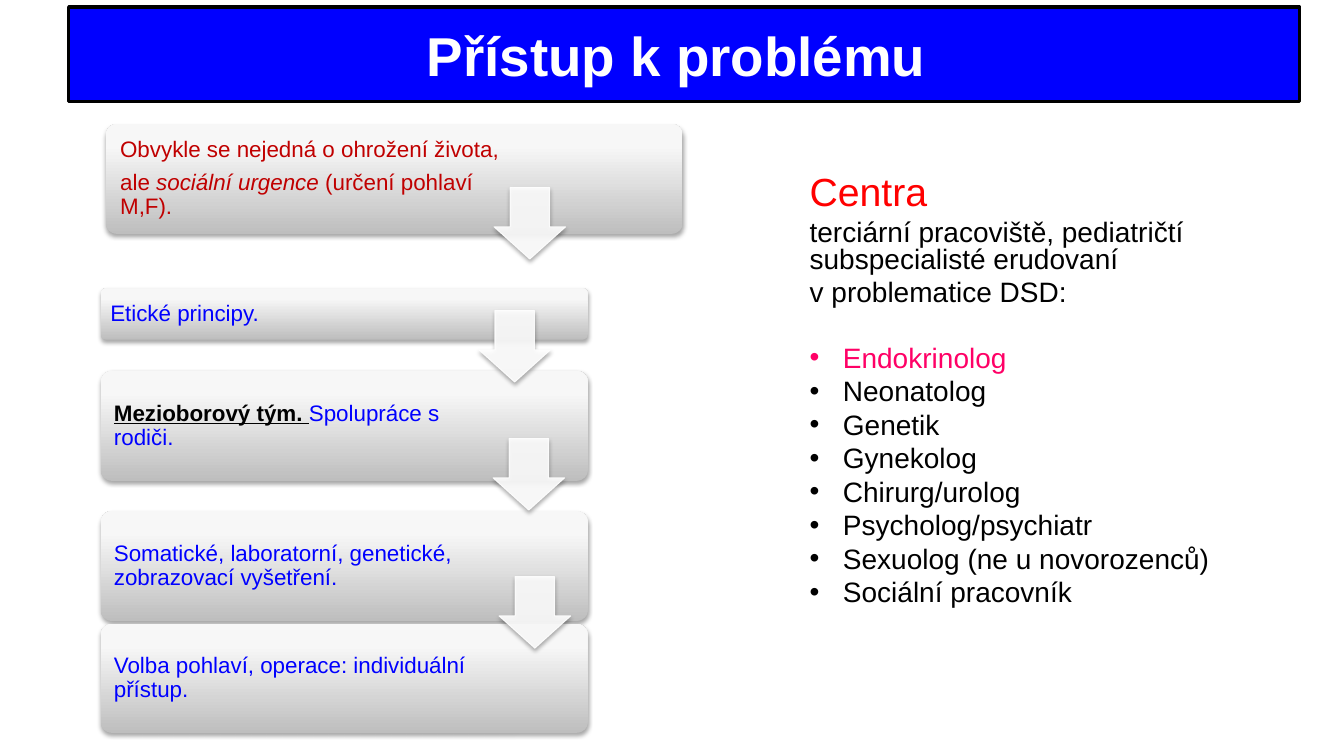
"""Build the slide on the approach to the problem: a step cascade beside a list of specialists."""
from lxml import etree
from pptx import Presentation
from pptx.dml.color import RGBColor
from pptx.enum import shapes, text
from pptx.oxml import ns
from pptx.util import Inches, Pt

COLORS = {
    "blue": "0000FF", "white": "FFFFFF", "black": "000000", "dark_red": "C00000",
    "red": "FF0000", "pink": "FF0066", "card_dark": "BEBEBE", "card_light": "F7F7F7",
}


def add_run(paragraph, words, size=16, color="blue", bold=False, italic=False, underline=False):
    run = paragraph.add_run()
    run.text = words
    font = run.font
    font.name, font.size = "Arial", Pt(size)
    font.bold, font.italic, font.underline = bold, italic, underline
    font.color.rgb = RGBColor.from_string(COLORS[color])


def add_shadow(shape):
    effects = etree.SubElement(shape._element.spPr, ns.qn("a:effectLst"))
    shadow = etree.SubElement(effects, ns.qn("a:outerShdw"), blurRad="40000", dist="23000",
                              dir="5400000", algn="ctr", rotWithShape="0")
    shade = etree.SubElement(shadow, ns.qn("a:srgbClr"), val=COLORS["black"])
    etree.SubElement(shade, ns.qn("a:alpha"), val="35000")


prs = Presentation()
prs.slide_width, prs.slide_height = Inches(13.33), Inches(7.5)
slide = prs.slides.add_slide(prs.slide_layouts[1])

heading = slide.shapes.title
heading.left, heading.top = Inches(0.68), Inches(0.07)
heading.width, heading.height = Inches(12.21), Inches(0.94)
heading.fill.solid()
heading.fill.fore_color.rgb = RGBColor.from_string(COLORS["blue"])
heading.line.color.rgb = RGBColor.from_string(COLORS["black"])
heading.line.width = Pt(2.25)
heading.text_frame.auto_size = text.MSO_AUTO_SIZE.NONE
heading.text_frame.vertical_anchor = text.MSO_ANCHOR.MIDDLE
heading.text_frame.paragraphs[0].alignment = text.PP_ALIGN.CENTER
add_run(heading.text_frame.paragraphs[0], "Přístup k problému ", size=39.1, color="white", bold=True)

urgent = {"color": "dark_red"}
steps = [
    (1.05, 1.23, 5.72, 1.09, 0.11, 1.56, [
        [("Obvykle se nejedná o ohrožení života,", urgent)],
        [("ale ", urgent), ("sociální urgence ", {**urgent, "italic": True}),
         ("(určení pohlaví M,F).", urgent)]]),
    (1, 2.86, 4.83, 0.51, 0.08, 1.15, [[("Etické principy.", {})]]),
    (1, 3.68, 4.83, 1.09, 0.1, 1.17, [
        [("Mezioborový tým. ", {"color": "black", "bold": True, "underline": True}),
         ("Spolupráce s rodiči.", {})]]),
    (1, 5.07, 4.83, 1.09, 0.1, 1.17, [
        [("Somatické, laboratorní, genetické, zobrazovací vyšetření.", {})]]),
    (1, 6.19, 4.83, 1.08, 0.1, 1.17, [
        [("Volba pohlaví, operace: individuální přístup.", {})]]),
]
for left, top, width, height, inset_left, inset_right, lines in steps:
    step = slide.shapes.add_shape(shapes.MSO_SHAPE.ROUNDED_RECTANGLE, Inches(left), Inches(top),
                                  Inches(width), Inches(height))
    step.adjustments[0] = 0.1
    step.fill.gradient()
    step.fill.gradient_angle = 90
    for stop, color, position in zip(step.fill.gradient_stops, ("card_dark", "card_light"), (0, 0.8)):
        stop.color.rgb = RGBColor.from_string(COLORS[color])
        stop.position = position
    step.line.fill.background()
    add_shadow(step)
    frame = step.text_frame
    frame.word_wrap = True
    frame.vertical_anchor = text.MSO_ANCHOR.MIDDLE
    frame.margin_left, frame.margin_right = Inches(inset_left), Inches(inset_right)
    frame.margin_top = frame.margin_bottom = Inches(0.07)
    for number, runs in enumerate(lines):
        line = frame.add_paragraph() if number else frame.paragraphs[0]
        line.alignment = text.PP_ALIGN.LEFT
        line.line_spacing = 0.9
        line.space_after = Pt(6.3)
        for words, style in runs:
            add_run(line, words, **style)

for left, top in [(4.9, 1.86), (4.75, 3.08), (4.89, 4.35), (4.95, 5.72)]:
    arrow = slide.shapes.add_shape(shapes.MSO_SHAPE.DOWN_ARROW, Inches(left), Inches(top),
                                   Inches(0.71), Inches(0.71))
    arrow.adjustments[0], arrow.adjustments[1] = 0.45, 0.55
    arrow.adjustments[0], arrow.adjustments[1] = 0.55, 0.45
    arrow.fill.solid()
    arrow.fill.fore_color.rgb = RGBColor.from_string(COLORS["white"])
    arrow.line.color.rgb = RGBColor.from_string(COLORS["white"])
    arrow.line.width = Pt(0.75)
    for tint in arrow._element.spPr.iter(ns.qn("a:srgbClr")):
        etree.SubElement(tint, ns.qn("a:alpha"), val="90000")
    add_shadow(arrow)

centers = slide.placeholders[1]
centers.left, centers.top = Inches(7.93), Inches(1.7)
centers.width, centers.height = Inches(4.41), Inches(4.96)
centers.text_frame.auto_size = text.MSO_AUTO_SIZE.NONE
entries = [
    ("Centra", False, 6.5, {"size": 28, "color": "red"}),
    ("terciární pracoviště, pediatričtí subspecialisté erudovaní", False, 4.7, {}),
    ("v problematice DSD:", False, 4.7, {}),
    ("Endokrinolog", True, 27.8, {"color": "pink"}),
]
specialists = ["Neonatolog", "Genetik", "Gynekolog", "Chirurg/urolog", "Psycholog/psychiatr",
               "Sexuolog (ne u novorozenců)", "Sociální pracovník"]
entries += [(specialist, True, 4.7, {}) for specialist in specialists]
for number, (words, bulleted, gap, style) in enumerate(entries):
    entry = centers.text_frame.add_paragraph() if number else centers.text_frame.paragraphs[0]
    entry.line_spacing = 0.8
    entry.space_before = Pt(gap)
    indent = Inches(0.33) if bulleted else 0
    properties = entry._p.get_or_add_pPr()
    properties.set("marL", str(indent))
    properties.set("indent", str(-indent))
    if not bulleted:
        etree.SubElement(properties, ns.qn("a:buNone"))
    add_run(entry, words, **{"size": 20, "color": "black", **style})

prs.save("out.pptx")
